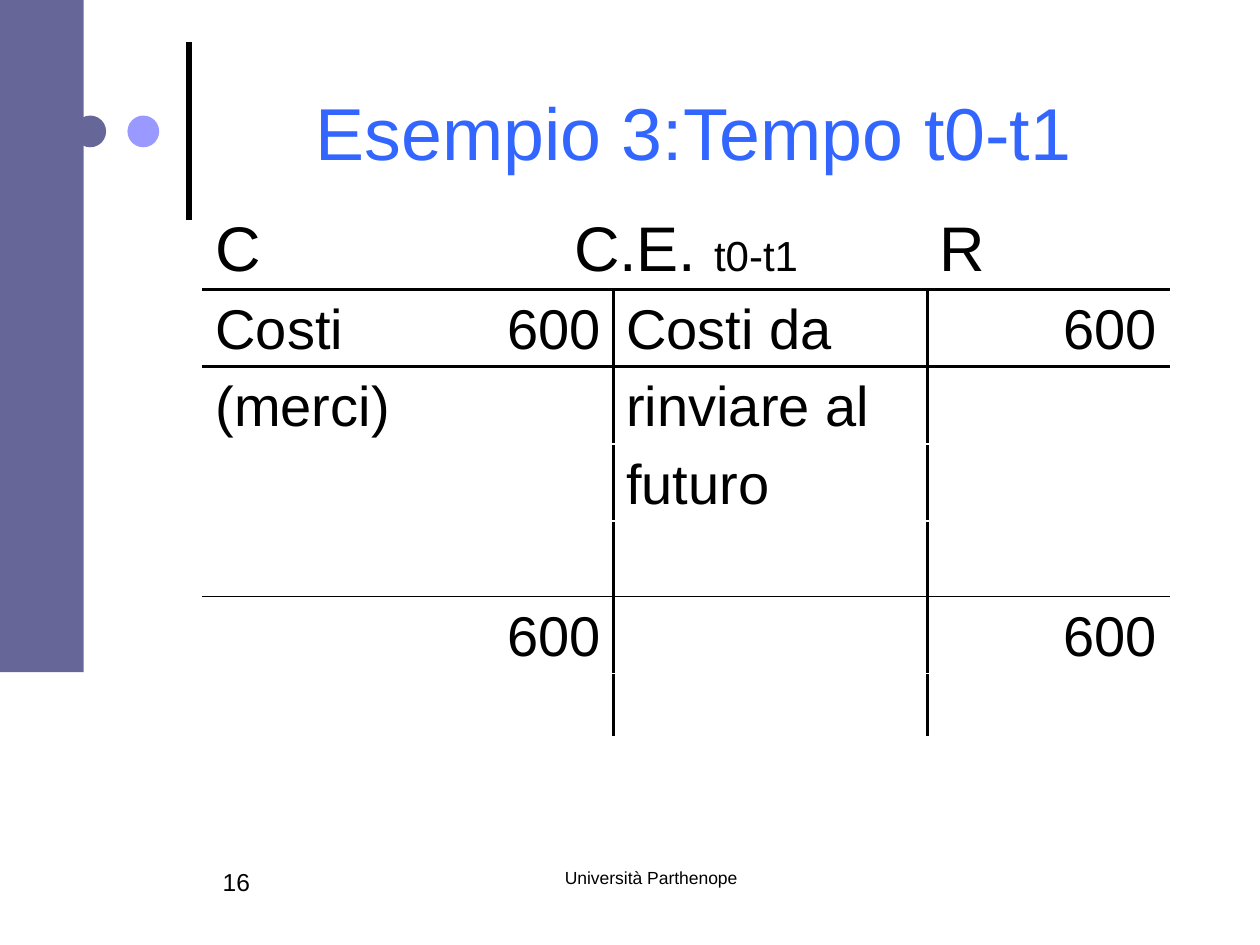
"""Build the slide with the T-account of the income statement for t0-t1."""
from lxml import etree
from pptx import Presentation, dml, util as u
from pptx.dml.color import RGBColor
from pptx.enum import shapes, text
from pptx.oxml.ns import qn

BLACK, SLATE, LILAC, BLUE = "000000", "666699", "9999FF", "3366FF"
LEFT, CENTER, RIGHT = text.PP_ALIGN.LEFT, text.PP_ALIGN.CENTER, text.PP_ALIGN.RIGHT

TITLE = "Esempio 3:Tempo t0-t1"
FOOTERS = [
    ("Università Parthenope", 10, CENTER, (9.1, 17.35, 8.05, 1.27)),
    ("16", 14, LEFT, (4.24, 17.35, 3.6, 1.27)),
]
DECORATIONS = [
    ("OVAL", SLATE, (1.5, 2.33, 0.64, 0.64)),
    ("OVAL", LILAC, (2.57, 2.33, 0.64, 0.64)),
    ("RECTANGLE", SLATE, (0, 0, 1.69, 13.55)),
]
HEADER = [
    (0, [("C", 36)], LEFT),
    (1, [("C.E. ", 36), ("t0-t1", 24)], CENTER),
    (3, [("R", 36)], LEFT),
]
ENTRIES = [
    ("Costi", "600", "Costi da", "600"),
    ("(merci)", "", "rinviare al", ""),
    ("", "", "futuro", ""),
    ("", "", "", ""),
    ("", "600", "", "600"),
    ("", "", "", ""),
    ("", "", "", ""),
]
COLUMNS = [4.88, 3.4, 6.32, 4.88]
ROWS = [1.68] + [1.52] * 5 + [1.28, 1.25]
ACCOUNT_AT = (4.09, 4.11, sum(COLUMNS), sum(ROWS))
TOTAL_ROW = 5
LAST_RULED_ROW = 6


def rgb(code):
    return RGBColor.from_string(code)


def box(at):
    return [u.Cm(length) for length in at]


def apply(target, values):
    for name, value in values.items():
        setattr(target, name, value)


def write(frame, runs, align, color=BLACK):
    paragraph = frame.paragraphs[0]
    paragraph.alignment = align
    for words, size in runs:
        run = paragraph.add_run()
        run.text = words
        apply(run.font, {"size": u.Pt(size), "name": "Arial", "bold": False})
        run.font.color.rgb = rgb(color)


def rule(cell, side, points):
    line = etree.SubElement(cell._tc.get_or_add_tcPr(), qn(f"a:ln{side}"), w=str(u.Pt(points)))
    fill = etree.SubElement(line, qn("a:solidFill"))
    etree.SubElement(fill, qn("a:srgbClr"), val=BLACK)


def rules(row, column):
    ruled = 0 < row <= LAST_RULED_ROW
    return [
        ("L", 2 if ruled and column == 2 else 0),
        ("R", 2 if ruled and column == 1 else 0),
        ("T", {1: 2, TOTAL_ROW: 1}.get(row, 0)),
        ("B", {0: 2, TOTAL_ROW - 1: 1}.get(row, 0)),
    ]


def add_decorations(slide):
    bar = slide.shapes.add_connector(
        shapes.MSO_CONNECTOR.STRAIGHT, *box((3.81, 4.44, 3.81, 0.84)))
    bar.line.width = u.Pt(3)
    bar.line.color.rgb = rgb(BLACK)
    etree.SubElement(bar._element.spPr, qn("a:effectLst"))
    for kind, color, at in DECORATIONS:
        ornament = slide.shapes.add_shape(getattr(shapes.MSO_SHAPE, kind), *box(at))
        ornament.shadow.inherit = False
        ornament.fill.solid()
        ornament.fill.fore_color.rgb = rgb(color)
        ornament.line.fill.background()


def add_account(slide):
    account = slide.shapes.add_table(len(ROWS), len(COLUMNS), *box(ACCOUNT_AT)).table
    apply(account, {"first_row": False, "horz_banding": False})
    for column, width in zip(account.columns, COLUMNS):
        column.width = u.Cm(width)
    for row, height in zip(account.rows, ROWS):
        row.height = u.Cm(height)
    for row in range(len(ROWS)):
        for column in range(len(COLUMNS)):
            cell = account.cell(row, column)
            apply(cell, {"margin_top": u.Cm(0.1), "margin_bottom": u.Cm(0.1),
                         "vertical_anchor": text.MSO_ANCHOR.BOTTOM})
            for side, points in rules(row, column):
                if points:
                    rule(cell, side, points)
            cell.fill.background()
    account.cell(0, 1).merge(account.cell(0, 2))
    for column, runs, align in HEADER:
        write(account.cell(0, column).text_frame, runs, align)
    for row, entry in enumerate(ENTRIES, 1):
        for column, words in enumerate(entry):
            if words:
                write(account.cell(row, column).text_frame, [(words, 32)],
                      RIGHT if column % 2 else LEFT)


def main():
    deck = Presentation()
    apply(deck, {"slide_width": u.Cm(25.4), "slide_height": u.Cm(19.05)})
    slide = deck.slides.add_slide(deck.slide_layouts[5])
    add_decorations(slide)
    for words, size, align, at in FOOTERS:
        footer = slide.shapes.add_textbox(*box(at)).text_frame
        footer.word_wrap = True
        write(footer, [(words, size)], align)
    title = slide.shapes.title
    apply(title, dict(zip(("left", "top", "width", "height"), box((4.24, 0.53, 19.48, 4.24)))))
    title.text_frame.vertical_anchor = text.MSO_ANCHOR.MIDDLE
    write(title.text_frame, [(TITLE, 42)], CENTER, BLUE)
    add_account(slide)
    deck.save("out.pptx")


if __name__ == "__main__":
    main()
